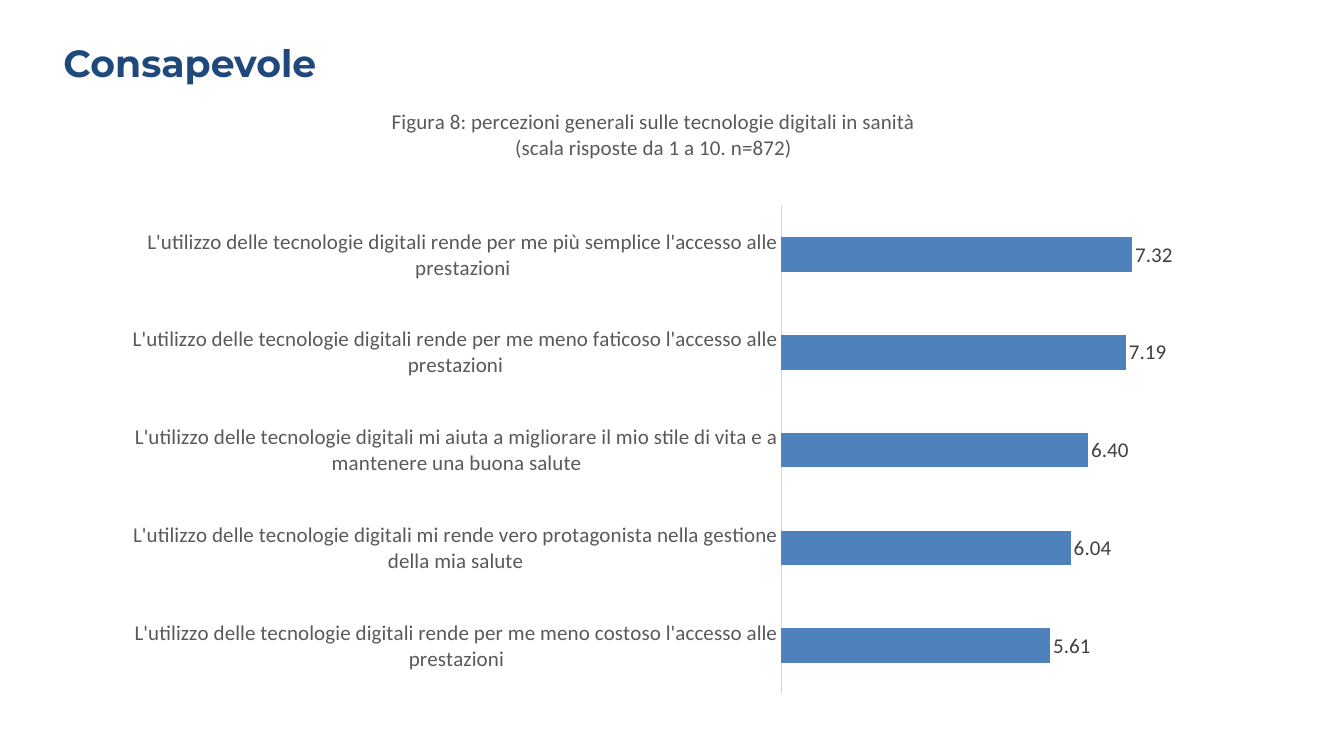
import pptx
import pptx.chart.data
import pptx.dml.color
import pptx.enum.chart
import pptx.enum.text
import pptx.util
from pptx.oxml import parse_xml
from pptx.oxml.ns import nsdecls

RGBColor = pptx.dml.color.RGBColor
NAVY = RGBColor(0x1F, 0x49, 0x7D)
BLUE = RGBColor(0x4F, 0x81, 0xBD)
GREY = RGBColor(0x59, 0x59, 0x59)
DARK = RGBColor(0x40, 0x40, 0x40)
PALE = RGBColor(0xD9, 0xD9, 0xD9)

CAPTION = ("Figura 8: percezioni generali sulle tecnologie digitali in sanità\n"
           "(scala risposte da 1 a 10. n=872)")
STEM = "L'utilizzo delle tecnologie digitali "
SCORES = {
    "rende per me meno costoso l'accesso alle prestazioni": 5.61,
    "mi rende vero protagonista nella gestione della mia salute": 6.04,
    "mi aiuta a migliorare il mio stile di vita e a mantenere una buona salute": 6.40,
    "rende per me meno faticoso l'accesso alle prestazioni": 7.19,
    "rende per me più semplice l'accesso alle prestazioni": 7.32,
}


class Deck:
    """Holds the style and the current slide, measured on a 100 by 100 grid."""

    TITLE = {"name": "Montserrat", "size": 36, "bold": True, "color": NAVY}
    BODY = {"name": "Calibri", "size": 20, "bold": False, "color": GREY}
    LABEL = {**BODY, "color": DARK}
    NUMBER = "###0.00"

    def __init__(self, width, height):
        self.prs = pptx.Presentation()
        self.prs.slide_width = pptx.util.Inches(width)
        self.prs.slide_height = pptx.util.Inches(height)
        self.slide = self.prs.slides.add_slide(self.prs.slide_layouts[5])

    def box(self, col, row, cols, rows):
        w, h = self.prs.slide_width / 100, self.prs.slide_height / 100
        return [round(v) for v in (col * w, row * h, cols * w, rows * h)]

    def style(self, font, fmt):
        for key, value in fmt.items():
            if key == "color":
                font.color.rgb = value
            else:
                setattr(font, key, pptx.util.Pt(value) if key == "size" else value)

    def title(self, text, *cell):
        sp = self.slide.shapes.title
        for key, value in zip(("left", "top", "width", "height"), self.box(*cell)):
            setattr(sp, key, value)
        tf = sp.text_frame
        tf.vertical_anchor = pptx.enum.text.MSO_ANCHOR.MIDDLE
        p = tf.paragraphs[0]
        p.alignment = pptx.enum.text.PP_ALIGN.LEFT
        r = p.add_run()
        r.text = text
        self.style(r.font, self.TITLE)

    def bar_chart(self, caption, scores, plot, *cell):
        data = pptx.chart.data.CategoryChartData(number_format=self.NUMBER)
        data.categories = [STEM + end for end in scores]
        data.add_series("Series 1", scores.values())
        kind = pptx.enum.chart.XL_CHART_TYPE.BAR_CLUSTERED
        chart = self.slide.shapes.add_chart(kind, *self.box(*cell), data).chart
        self.style(chart.font, self.BODY)
        chart.has_legend = False
        self.caption(chart, caption)
        self.axes(chart)
        self.bars(chart.plots[0])
        self.place_plot(chart, plot)

    def caption(self, chart, text):
        tf = chart.chart_title.text_frame
        tf.text = text
        for p in tf.paragraphs:
            self.style(p.font, self.BODY)
            for r in p.runs:
                self.style(r.font, self.BODY)
        chart.chart_title.include_in_layout = False

    def axes(self, chart):
        cat, val = chart.category_axis, chart.value_axis
        cat.major_tick_mark = pptx.enum.chart.XL_TICK_MARK.NONE
        cat.format.line.color.rgb = PALE
        cat.format.line.width = pptx.util.Pt(0.75)
        self.style(cat.tick_labels.font, self.BODY)
        for key, value in {"minimum_scale": 0, "maximum_scale": 8,
                           "has_major_gridlines": False, "visible": False}.items():
            setattr(val, key, value)

    def bars(self, plot):
        plot.gap_width = 182
        plot.vary_by_categories = False
        fill = plot.series[0].format.fill
        fill.solid()
        fill.fore_color.rgb = BLUE
        labels = plot.series[0].data_labels
        for key, value in {"show_value": True, "number_format": self.NUMBER,
                           "number_format_is_linked": False,
                           "position": pptx.enum.chart.XL_LABEL_POSITION.OUTSIDE_END}.items():
            setattr(labels, key, value)
        self.style(labels.font, self.LABEL)

    def place_plot(self, chart, shares):
        modes = '<c:layoutTarget val="inner"/><c:xMode val="edge"/><c:yMode val="edge"/>'
        sizes = "".join(f'<c:{tag} val="{v}"/>' for tag, v in zip("xywh", shares))
        area = chart.plots[0]._element.getparent()
        for old in area.findall(pptx.oxml.ns.qn("c:layout")):
            area.remove(old)
        area.insert(0, parse_xml(
            f'<c:layout {nsdecls("c")}><c:manualLayout>{modes}{sizes}'
            '</c:manualLayout></c:layout>'))


def main():
    deck = Deck(17.78, 10)
    deck.title("Consapevole", 4.16, 4.7, 85.26, 7.1)
    deck.bar_chart(CAPTION, SCORES, (0.62, 0.19, 0.36, 0.79), 9, 11.7, 79.25, 81.8)
    deck.prs.save("out.pptx")


if __name__ == "__main__":
    main()
